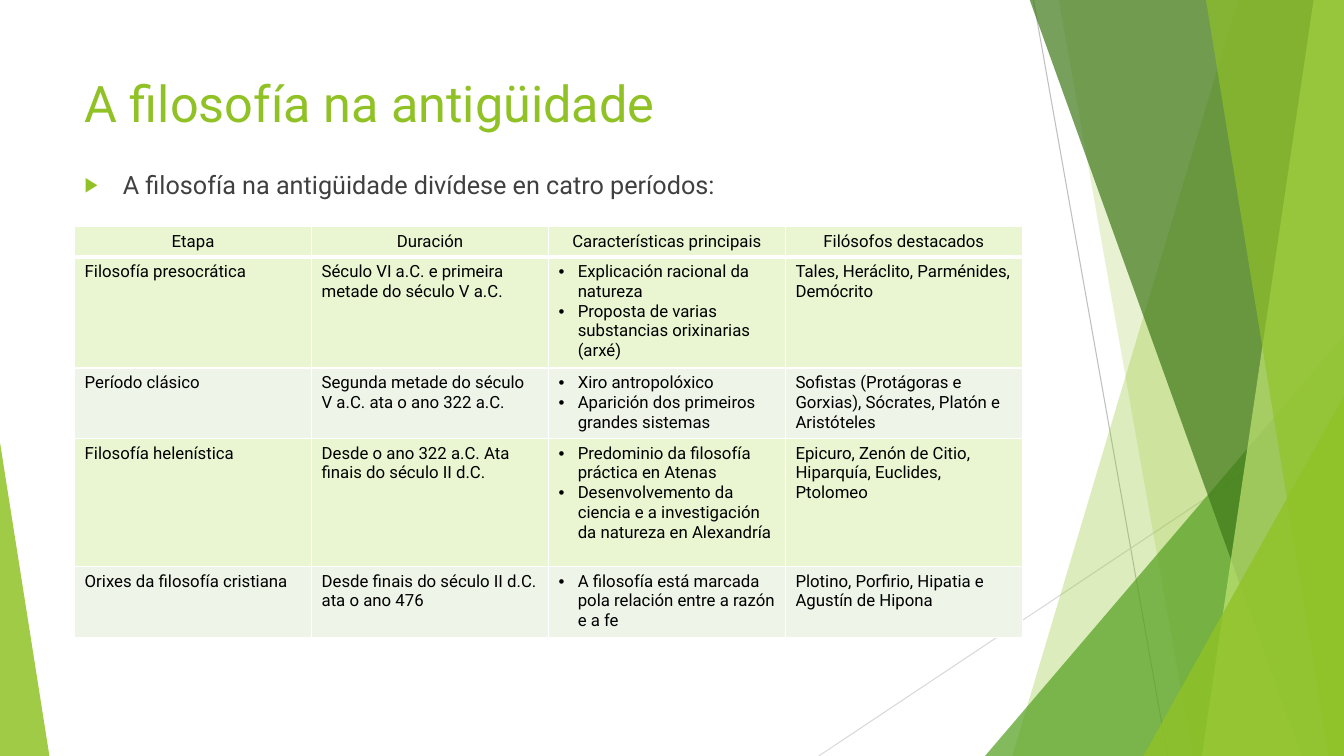
from lxml.etree import SubElement
from pptx import Presentation
from pptx.dml.color import RGBColor
from pptx.enum.shapes import MSO_CONNECTOR, MSO_SHAPE
from pptx.enum.text import MSO_ANCHOR, PP_ALIGN
from pptx.oxml.ns import qn
from pptx.util import Inches, Pt

WHITE = RGBColor(0xFF, 0xFF, 0xFF)
BLACK = RGBColor(0, 0, 0)
BODY_GRAY = RGBColor(0x40, 0x40, 0x40)
LINE_GRAY = RGBColor(0xBF, 0xBF, 0xBF)
PALE_GRAY = RGBColor(0xD9, 0xD9, 0xD9)
LIME = RGBColor(0x90, 0xC2, 0x26)
GREEN = RGBColor(0x54, 0xA0, 0x21)
DARK_GREEN = RGBColor(0x3F, 0x78, 0x19)
LIGHT_LIME = RGBColor(0xC0, 0xE4, 0x74)
ROW_LIME = RGBColor(0xEA, 0xF6, 0xD1)
ROW_GRAY = RGBColor(0xEE, 0xF4, 0xE8)

FONT = "Roboto"
WIDTH, HEIGHT = 13.33, 7.5

HEADERS = ["Etapa", "Duración", "Características principais", "Filósofos destacados"]
PERIODS = [
    (1.07, "Filosofía presocrática",
     "Século VI a.C. e primeira metade do século V a.C.",
     ["Explicación racional da natureza",
      "Proposta de varias substancias orixinarias (arxé)"],
     "Tales, Heráclito, Parménides, Demócrito"),
    (0.69, "Período clásico",
     "Segunda metade do século V a.C. ata o ano 322 a.C.",
     ["Xiro antropolóxico", "Aparición dos primeiros grandes sistemas"],
     "Sofistas (Protágoras e Gorxias), Sócrates, Platón e Aristóteles"),
    (1.27, "Filosofía helenística",
     "Desde o ano 322 a.C. Ata finais do século II d.C.",
     ["Predominio da filosofía práctica en Atenas",
      "Desenvolvemento da ciencia e a investigación da natureza en Alexandría"],
     "Epicuro, Zenón de Citio, Hiparquía, Euclides, Ptolomeo"),
    (0.69, "Orixes da filosofía cristiana",
     "Desde finais do século II d.C. ata o ano 476",
     ["A filosofía está marcada pola relación entre a razón e a fe"],
     "Plotino, Porfirio, Hipatia e Agustín de Hipona"),
]


def write_text(text_frame, lines, size=12, color=BLACK, align=PP_ALIGN.LEFT,
               bullet=None, indent=0.19, bullet_color=None, bullet_percent=100):
    text_frame.word_wrap = True
    for index, line in enumerate(lines):
        paragraph = text_frame.paragraphs[0] if index == 0 else text_frame.add_paragraph()
        paragraph.alignment = align
        run = paragraph.add_run()
        run.text = line
        run.font.name = FONT
        run.font.size = Pt(size)
        run.font.bold = False
        run.font.color.rgb = color
        if bullet:
            properties = paragraph._p.get_or_add_pPr()
            properties.set("marL", str(Inches(indent)))
            properties.set("indent", str(-Inches(indent)))
            bullet_fill = SubElement(properties, qn("a:buClr"))
            SubElement(bullet_fill, qn("a:srgbClr"), val=str(bullet_color or color))
            SubElement(properties, qn("a:buSzPct"), val=str(bullet_percent * 1000))
            SubElement(properties, qn("a:buFont"), typeface="Arial")
            SubElement(properties, qn("a:buChar"), char=bullet)


def add_text(slide, box, lines, **text_format):
    shape = slide.shapes.add_textbox(*map(Inches, box))
    shape.text_frame.vertical_anchor = MSO_ANCHOR.TOP
    write_text(shape.text_frame, lines, **text_format)


def paint(shape, color, opacity):
    shape.shadow.inherit = False
    shape.line.fill.background()
    shape.fill.solid()
    shape.fill.fore_color.rgb = color
    color_element = shape._element.spPr.find(qn("a:solidFill"))[0]
    SubElement(color_element, qn("a:alpha"), val=str(opacity * 1000))


def add_line(slide, start, end, color):
    connector = slide.shapes.add_connector(
        MSO_CONNECTOR.STRAIGHT, *map(Inches, start + end))
    connector.line.color.rgb = color
    connector.line.width = Pt(0.75)
    SubElement(connector._element.spPr, qn("a:effectLst"))


def add_band(slide, box, top_left, bottom_left, color, opacity):
    left, top, right, bottom = box
    points = [(left + top_left, top), (right, top),
              (right, bottom), (left + bottom_left, bottom)]
    corners = [(Inches(x), Inches(y)) for x, y in points]
    builder = slide.shapes.build_freeform(*corners[0], scale=1.0)
    builder.add_line_segments(corners[1:], close=True)
    paint(builder.convert_to_shape(), color, opacity)


def add_triangle(slide, box, apex, color, opacity):
    shape = slide.shapes.add_shape(MSO_SHAPE.ISOSCELES_TRIANGLE, *map(Inches, box))
    shape.adjustments[0] = apex
    paint(shape, color, opacity)


def add_decoration(slide, left, top, right, bottom):
    def band(top_left, bottom_left, color, opacity):
        add_band(slide, (left, top - 0.01, right, bottom),
                 top_left, bottom_left, color, opacity)

    def corner(width, height, color, opacity):
        add_triangle(slide, (right - width, bottom - height, width, height),
                     1, color, opacity)

    add_line(slide, (left + 0.48, top), (left + 1.81, bottom), LINE_GRAY)
    add_line(slide, (right, top + 4.03), (left - 1.65, bottom), PALE_GRAY)
    band(2.51, 0.27, LIME, 30)
    band(0.73, 2.06, LIME, 20)
    corner(3.56, 4.17, GREEN, 72)
    band(0.44, 3.14, DARK_GREEN, 70)
    band(3.26, 2.15, LIGHT_LIME, 70)
    band(2.19, 3.41, LIME, 65)
    corner(1.99, 3.57, LIME, 80)
    add_triangle(slide, (0, bottom - 3.11, 0.49, 3.11), 0, LIME, 85)


def set_borders(cell, top=1, bottom=1):
    properties = cell._tc.get_or_add_tcPr()
    for side, points in (("L", 1), ("R", 1), ("T", top), ("B", bottom)):
        border = SubElement(properties, qn("a:ln" + side), w=str(Pt(points)))
        fill = SubElement(border, qn("a:solidFill"))
        SubElement(fill, qn("a:srgbClr"), val=str(WHITE))


def add_periods_table(slide, left, top, width):
    rows = [(0.3, *HEADERS)] + PERIODS
    height = sum(row[0] for row in rows)
    table = slide.shapes.add_table(
        len(rows), len(HEADERS), *map(Inches, (left, top, width, height))).table
    for column in table.columns:
        column.width = Inches(width / len(HEADERS))
    for row_index, (row_height, *contents) in enumerate(rows):
        table.rows[row_index].height = Inches(row_height)
        is_header = row_index == 0
        for column_index, content in enumerate(contents):
            cell = table.cell(row_index, column_index)
            is_list = isinstance(content, list)
            write_text(cell.text_frame, content if is_list else [content],
                       align=PP_ALIGN.CENTER if is_header else PP_ALIGN.LEFT,
                       bullet="•" if is_list else None)
            set_borders(cell, top=3 if row_index == 1 else 1,
                        bottom=3 if is_header else 1)
            cell.fill.solid()
            cell.fill.fore_color.rgb = (
                ROW_LIME if is_header or row_index % 2 else ROW_GRAY)


def main():
    presentation = Presentation()
    presentation.slide_width = Inches(WIDTH)
    presentation.slide_height = Inches(HEIGHT)
    slide = presentation.slides.add_slide(presentation.slide_layouts[6])
    add_decoration(slide, 9.77, 0, WIDTH, HEIGHT)
    add_text(slide, (0.74, 0.67, 9.4, 1.44), ["A filosofía na antigüidade"],
             size=36, color=LIME)
    add_text(slide, (0.74, 1.63, 9.4, 4.24),
             ["A filosofía na antigüidade divídese en catro períodos:"],
             size=18, color=BODY_GRAY, bullet="▶", indent=0.38,
             bullet_color=LIME, bullet_percent=80)
    add_periods_table(slide, 0.74, 2.25, 9.4)
    presentation.save("out.pptx")


if __name__ == "__main__":
    main()
